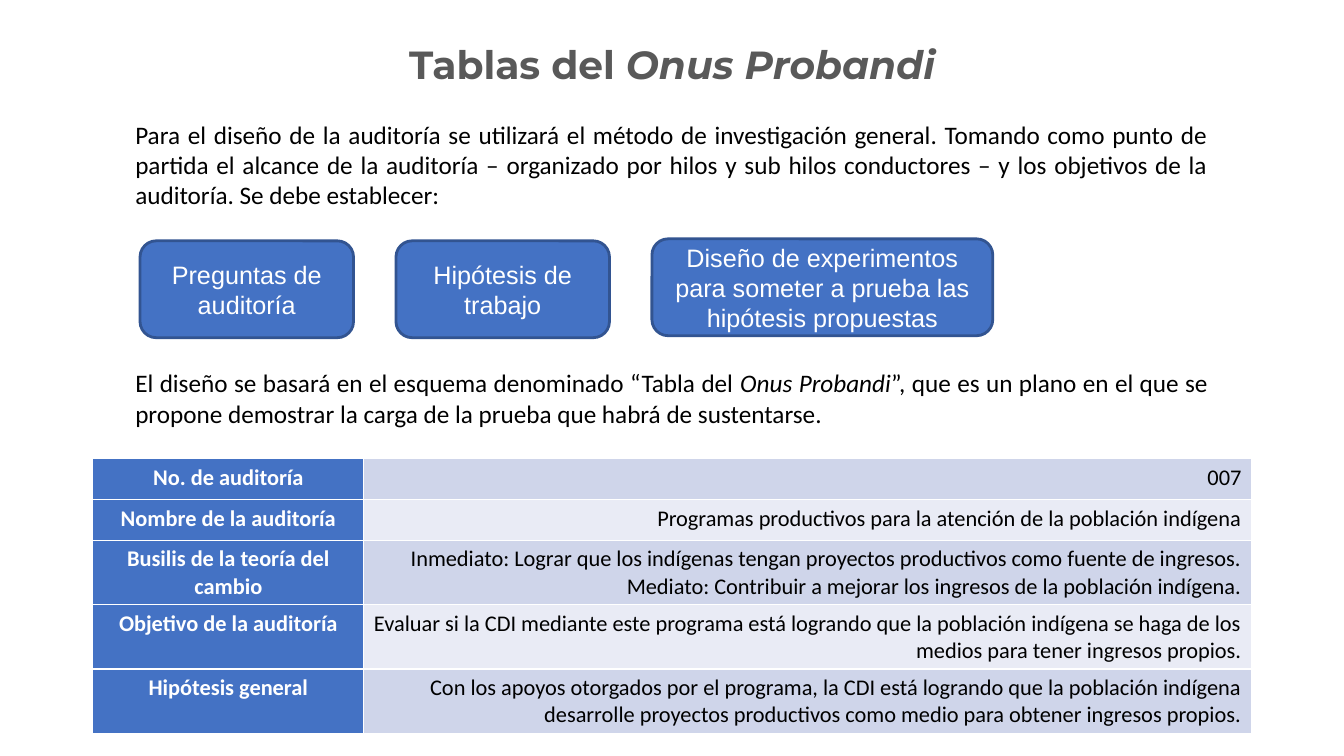
from pptx import Presentation
from pptx import util as u
from pptx.dml.color import RGBColor
from pptx.enum import shapes, text

COLORS = {
    "title": "595959",
    "ink": "000000",
    "white": "FFFFFF",
    "blue": "4472C4",
    "outline": "325491",
    "band_dark": "CFD5EA",
    "band_light": "E9EBF5",
}

INTRO = [("Para el diseño de la auditoría se utilizará el método de investigación "
          "general. Tomando como punto de partida el alcance de la auditoría – "
          "organizado por hilos y sub hilos conductores – y los objetivos de la "
          "auditoría. Se debe establecer:", False)]

SCHEME = [("El diseño se basará en el esquema denominado “Tabla del ", False),
          ("Onus Probandi", True),
          ("”, que es un plano en el que se propone demostrar la carga de la prueba "
           "que habrá de sustentarse.", False)]

# Wording, width and downward shift of each step, in cm
STEPS = [
    ("Preguntas de auditoría", 5.38, 0.05),
    ("Hipótesis de trabajo", 5.38, 0.05),
    ("Diseño de experimentos para someter a prueba las hipótesis propuestas", 8.59, 0),
]

# Label, lines of the value, row height in cm
AUDIT_ROWS = [
    ("No. de auditoría", ["007"], 1.03),
    ("Nombre de la auditoría",
     ["Programas productivos para la atención de la población indígena"], 1.03),
    ("Busilis de la teoría del cambio",
     ["Inmediato: Lograr que los indígenas tengan proyectos productivos como "
      "fuente de ingresos.",
      "Mediato: Contribuir a mejorar los ingresos de la población indígena."], 1.62),
    ("Objetivo de la auditoría",
     ["Evaluar si la CDI mediante este programa está logrando que la población "
      "indígena se haga de los medios para tener ingresos propios."], 1.62),
    ("Hipótesis general",
     ["Con los apoyos otorgados por el programa, la CDI está logrando que la "
      "población indígena desarrolle proyectos productivos como medio para "
      "obtener ingresos propios."], 1.62),
]


def rgb(name):
    return RGBColor.from_string(COLORS[name])


def add_run(paragraph, wording, size, color, face="Calibri", bold=False, italic=False):
    run = paragraph.add_run()
    run.text = wording
    run.font.name = face
    run.font.size = u.Pt(size)
    run.font.bold = bold
    run.font.italic = italic
    run.font.color.rgb = rgb(color)


def place_title(slide, left, top, width, height):
    title = slide.shapes.title
    title.left, title.top = u.Cm(left), u.Cm(top)
    title.width, title.height = u.Cm(width), u.Cm(height)
    frame = title.text_frame
    frame.auto_size = text.MSO_AUTO_SIZE.NONE
    frame.vertical_anchor = text.MSO_ANCHOR.TOP
    frame.margin_left = frame.margin_right = u.Cm(0.13)
    frame.margin_top = frame.margin_bottom = u.Cm(0.13)
    heading = frame.paragraphs[0]
    heading.alignment = text.PP_ALIGN.CENTER
    heading.line_spacing = 0.9
    for wording, italic in [("Tablas del ", False), ("Onus Probandi", True)]:
        add_run(heading, wording, 28, "title", "Montserrat", bold=True, italic=italic)


def add_prose(slide, pieces, left, top, width, height):
    """Add a justified paragraph made of (wording, italic) pieces."""
    prose = slide.shapes.add_textbox(u.Cm(left), u.Cm(top), u.Cm(width), u.Cm(height))
    frame = prose.text_frame
    frame.word_wrap = True
    frame.auto_size = text.MSO_AUTO_SIZE.SHAPE_TO_FIT_TEXT
    paragraph = frame.paragraphs[0]
    paragraph.alignment = text.PP_ALIGN.JUSTIFY
    for wording, italic in pieces:
        add_run(paragraph, wording, 18, "ink", italic=italic)


def add_steps(slide, left, top, height, gap):
    for wording, width, shift in STEPS:
        step = slide.shapes.add_shape(
            shapes.MSO_SHAPE.ROUNDED_RECTANGLE,
            u.Cm(left), u.Cm(top + shift), u.Cm(width), u.Cm(height))
        step.shadow.inherit = False
        step.fill.solid()
        step.fill.fore_color.rgb = rgb("blue")
        step.line.color.rgb = rgb("outline")
        step.line.width = u.Pt(2)
        frame = step.text_frame
        frame.word_wrap = True
        frame.vertical_anchor = text.MSO_ANCHOR.MIDDLE
        paragraph = frame.paragraphs[0]
        paragraph.alignment = text.PP_ALIGN.CENTER
        add_run(paragraph, wording, 18, "white", "Arial")
        left += width + gap


def fill_cell(cell, lines, fill, color, alignment, bold=False):
    cell.fill.solid()
    cell.fill.fore_color.rgb = rgb(fill)
    frame = cell.text_frame
    for index, line in enumerate(lines):
        paragraph = frame.add_paragraph() if index else frame.paragraphs[0]
        paragraph.alignment = alignment
        add_run(paragraph, line, 16, color, bold=bold)


def add_audit_table(slide, left, top, width, label_width):
    height = sum(row_height for _, _, row_height in AUDIT_ROWS)
    audit = slide.shapes.add_table(
        len(AUDIT_ROWS), 2, u.Cm(left), u.Cm(top), u.Cm(width), u.Cm(height)).table
    audit.first_row = False
    audit.horz_banding = False
    audit.columns[0].width = u.Cm(label_width)
    audit.columns[1].width = u.Cm(width - label_width)
    for index, (label, lines, row_height) in enumerate(AUDIT_ROWS):
        audit.rows[index].height = u.Cm(row_height)
        band = "band_light" if index % 2 else "band_dark"
        fill_cell(audit.cell(index, 0), [label], "blue", "white",
                  text.PP_ALIGN.CENTER, bold=True)
        fill_cell(audit.cell(index, 1), lines, band, "ink", text.PP_ALIGN.RIGHT)


def build_onus_probandi(deck):
    slide = deck.slides.add_slide(deck.slide_layouts.get_by_name("Title Only"))
    place_title(slide, 2.34, 1.02, 29.2, 1.55)
    add_prose(slide, INTRO, 3.16, 2.87, 27.53, 2.57)
    add_steps(slide, 3.53, 6.02, 2.44, 1.07)
    add_prose(slide, SCHEME, 3.16, 9.14, 27.53, 1.8)
    add_audit_table(slide, 2.34, 11.56, 29.2, 6.83)


def main():
    deck = Presentation()
    deck.slide_width, deck.slide_height = u.Cm(33.87), u.Cm(19.05)
    build_onus_probandi(deck)
    deck.save("out.pptx")


if __name__ == "__main__":
    main()
